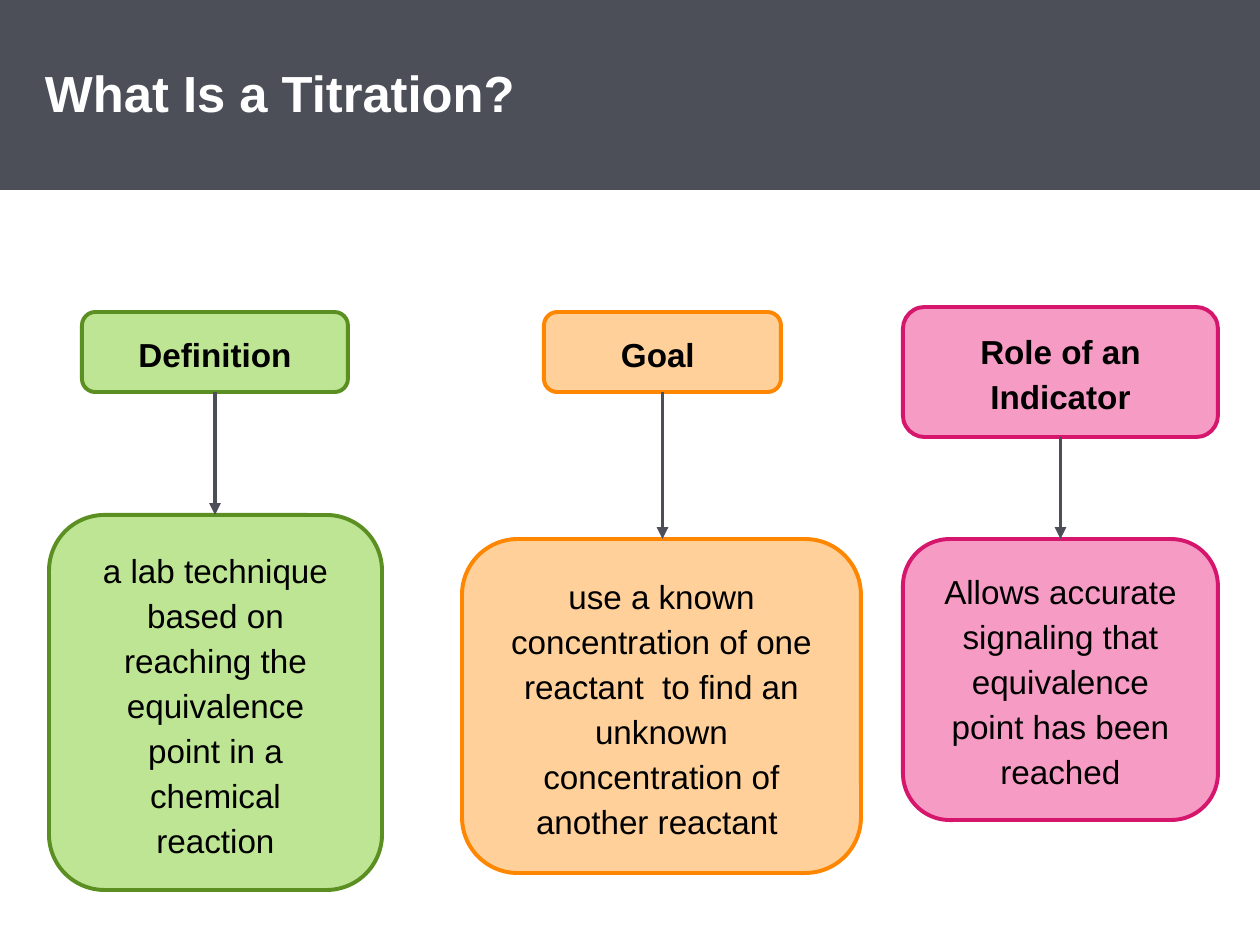
from dataclasses import dataclass

from lxml.etree import SubElement
from pptx import Presentation
from pptx.dml.color import RGBColor
from pptx.enum.shapes import MSO_CONNECTOR as Connector
from pptx.enum.shapes import MSO_SHAPE as Shape
from pptx.enum.text import MSO_ANCHOR as Anchor
from pptx.enum.text import PP_ALIGN as Align
from pptx.oxml.ns import qn
from pptx.util import Emu, Pt

EMU_PER_PX = 914400 / 126


@dataclass(frozen=True)
class Theme:
    font: str = "Arial"
    slate: str = "4D4F58"
    white: str = "FFFFFF"
    black: str = "000000"
    green: tuple = ("BEE593", "5B8F22")
    orange: tuple = ("FFD099", "FE8600")
    pink: tuple = ("F59BC4", "D6156C")
    title_size: int = 29
    text_size: int = 19
    line_width: float = 2.25


THEME = Theme()

# Heading, its box, explanation, its box, (fill, outline), vertical anchor
COLUMNS = [
    ("Definition", (82, 312, 266, 80),
     "a lab technique based on reaching the equivalence point in a chemical reaction",
     (49, 515, 333, 375), THEME.green, Anchor.MIDDLE),
    ("Goal ", (544, 312, 237, 80),
     "use a known concentration of one reactant  to find an unknown "
     "concentration of another reactant ",
     (462, 539, 399, 334), THEME.orange, Anchor.MIDDLE),
    ("Role of an Indicator", (903, 307, 315, 130),
     "Allows accurate signaling that equivalence point has been reached",
     (903, 539, 315, 281), THEME.pink, Anchor.TOP),
]


def px(length):
    return Emu(round(length * EMU_PER_PX))


def color(value):
    return RGBColor.from_string(value)


def set_values(target, values):
    for name, value in values.items():
        setattr(target, name, value)


def add_panel(slide, kind, bounds, fill):
    panel = slide.shapes.add_shape(kind, *map(px, bounds))
    panel.shadow.inherit = False
    panel.fill.solid()
    panel.fill.fore_color.rgb = color(fill)
    panel.line.fill.background()
    return panel


def write_text(panel, text, size, ink, bold, align, anchor, spacing, insets):
    """Fill a panel with one paragraph; insets are horizontal and vertical px."""
    side, edge = map(px, insets)
    set_values(panel.text_frame, {
        "word_wrap": True, "vertical_anchor": anchor,
        "margin_left": side, "margin_right": side,
        "margin_top": edge, "margin_bottom": edge,
    })
    para = panel.text_frame.paragraphs[0]
    set_values(para, {"alignment": align, "line_spacing": spacing})
    span = para.add_run()
    span.text = text
    set_values(span.font, {"name": THEME.font, "size": Pt(size), "bold": bold})
    span.font.color.rgb = color(ink)


def add_title(slide, text):
    banner = add_panel(slide, Shape.RECTANGLE, (0, 0, 1260, 190), THEME.slate)
    write_text(banner, text, THEME.title_size, THEME.white, True,
               Align.LEFT, Anchor.MIDDLE, 0.95, (45, 19))


def add_card(slide, text, bounds, colors, anchor, bold):
    fill, outline = colors
    card = add_panel(slide, Shape.ROUNDED_RECTANGLE, bounds, fill)
    card.line.color.rgb = color(outline)
    card.line.width = Pt(THEME.line_width)
    write_text(card, text, THEME.text_size, THEME.black, bold,
               Align.CENTER, anchor, 1.13, (26, 13))
    return card


def add_down_arrow(slide, upper, lower):
    """Point from the bottom centre of one card to the top of another."""
    center = upper.left + upper.width // 2
    arrow = slide.shapes.add_connector(
        Connector.STRAIGHT, center, upper.top + upper.height, center, lower.top)
    arrow.line.color.rgb = color(THEME.slate)
    arrow.line.width = Pt(THEME.line_width)
    SubElement(arrow.line._get_or_add_ln(), qn("a:tailEnd"), type="triangle")
    SubElement(arrow._element.spPr, qn("a:effectLst"))


def main():
    deck = Presentation()
    set_values(deck, {"slide_width": px(1260), "slide_height": px(945)})
    slide = deck.slides.add_slide(deck.slide_layouts[6])
    add_title(slide, "What Is a Titration?")
    for heading, head_box, detail, detail_box, colors, anchor in COLUMNS:
        head = add_card(slide, heading, head_box, colors, anchor, True)
        body = add_card(slide, detail, detail_box, colors, anchor, False)
        add_down_arrow(slide, head, body)
    deck.save("out.pptx")


if __name__ == "__main__":
    main()
